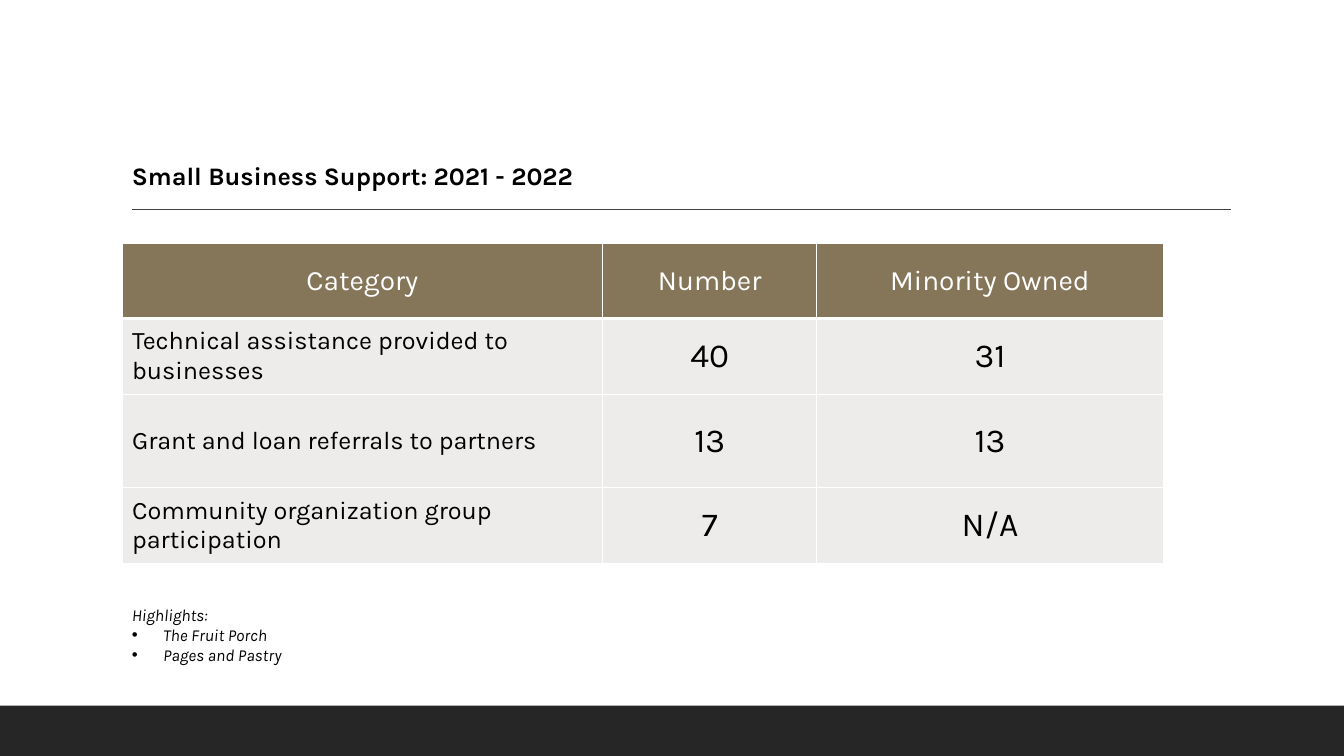
"""Build the small business support slide with its results table."""
from lxml.etree import SubElement
from pptx import Presentation
from pptx.dml.color import RGBColor
from pptx.enum.shapes import MSO_CONNECTOR as Connector, MSO_SHAPE as Shape
from pptx.enum.text import MSO_ANCHOR as Anchor, PP_ALIGN as Align
from pptx.oxml.ns import qn
from pptx.util import Inches, Pt

TITLE = "Small Business Support: 2021 - 2022"
ROWS = [
    ("Category", "Number", "Minority Owned"),
    ("Technical assistance provided to businesses", "40", "31"),
    ("Grant and loan referrals to partners", "13", "13"),
    ("Community organization group participation", "7", "N/A"),
]
HIGHLIGHTS_LABEL = "Highlights:"
HIGHLIGHTS = ["The Fruit Porch", "Pages and Pastry"]

COLUMN_WIDTHS = [4.77, 2.12, 3.44]
ROW_HEIGHTS = [0.75, 0.75, 0.93, 0.75]
LEFT = 1.21
BULLET_INDENT = Inches(0.31)
HEADER = {"size": Pt(20), "bold": False}
CATEGORY = {"size": Pt(18), "bold": False}
FIGURE = {"size": Pt(24), "bold": False}
TITLE_FONT = {"size": Pt(18), "bold": True}
HIGHLIGHT_FONT = {"size": Pt(12), "italic": True}


def color(value):
    return RGBColor.from_string(value)


def write(paragraph, text, style, ink="000000"):
    run = paragraph.add_run()
    run.text = text
    run.font.name = "Karla"
    run.font.color.rgb = color(ink)
    for name, value in style.items():
        setattr(run.font, name, value)


def add_text_box(slide, top, width, height):
    box = slide.shapes.add_textbox(Inches(LEFT), Inches(top), Inches(width), Inches(height))
    box.text_frame.word_wrap = True
    return box.text_frame


def add_bullet(paragraph):
    properties = paragraph._p.get_or_add_pPr()
    properties.set("marL", str(BULLET_INDENT))
    properties.set("indent", str(-BULLET_INDENT))
    SubElement(properties, qn("a:buFont"), typeface="Arial")
    SubElement(properties, qn("a:buChar"), char="•")


def add_borders(cell, bottom_width):
    properties = cell._tc.get_or_add_tcPr()
    for side, width in (("L", 1), ("R", 1), ("T", 1), ("B", bottom_width)):
        border = SubElement(properties, qn(f"a:ln{side}"), w=str(Pt(width)))
        fill = SubElement(border, qn("a:solidFill"))
        SubElement(fill, qn("a:srgbClr"), val="FFFFFF")


def add_base(slide):
    band = slide.shapes.add_shape(Shape.RECTANGLE, 0, Inches(7), Inches(13.33), Inches(0.5))
    band.shadow.inherit = False
    band.fill.solid()
    band.fill.fore_color.rgb = color("262626")
    band.line.fill.background()
    rule = slide.shapes.add_connector(
        Connector.STRAIGHT, Inches(1.31), Inches(2.08), Inches(12.21), Inches(2.08))
    rule.line.color.rgb = color("404040")
    rule.line.width = Pt(1)
    SubElement(rule._element.spPr, qn("a:effectLst"))


def add_results(slide):
    table = slide.shapes.add_table(
        len(ROWS), len(COLUMN_WIDTHS), Inches(LEFT), Inches(2.41),
        Inches(sum(COLUMN_WIDTHS)), Inches(sum(ROW_HEIGHTS))).table
    for column, width in zip(table.columns, COLUMN_WIDTHS):
        column.width = Inches(width)
    for row, height in zip(table.rows, ROW_HEIGHTS):
        row.height = Inches(height)
    for row_index, values in enumerate(ROWS):
        is_header = row_index == 0
        for column_index, text in enumerate(values):
            cell = table.cell(row_index, column_index)
            add_borders(cell, 3 if is_header else 1)
            cell.fill.solid()
            cell.fill.fore_color.rgb = color("857659" if is_header else "EDECEA")
            cell.vertical_anchor = Anchor.MIDDLE
            paragraph = cell.text_frame.paragraphs[0]
            is_category = column_index == 0 and not is_header
            paragraph.alignment = Align.LEFT if is_category else Align.CENTER
            style = HEADER if is_header else CATEGORY if is_category else FIGURE
            write(paragraph, text, style, "FFFFFF" if is_header else "000000")


def main():
    presentation = Presentation()
    presentation.slide_width, presentation.slide_height = Inches(13.33), Inches(7.5)
    slide = presentation.slides.add_slide(presentation.slide_layouts[6])
    add_base(slide)
    add_results(slide)
    highlights = add_text_box(slide, 5.95, 4.8, 0.71)
    write(highlights.paragraphs[0], HIGHLIGHTS_LABEL, HIGHLIGHT_FONT)
    for business in HIGHLIGHTS:
        paragraph = highlights.add_paragraph()
        add_bullet(paragraph)
        write(paragraph, business, HIGHLIGHT_FONT)
    title = add_text_box(slide, 1.54, 11.37, 0.4)
    write(title.paragraphs[0], TITLE, TITLE_FONT)
    presentation.save("out.pptx")


if __name__ == "__main__":
    main()
